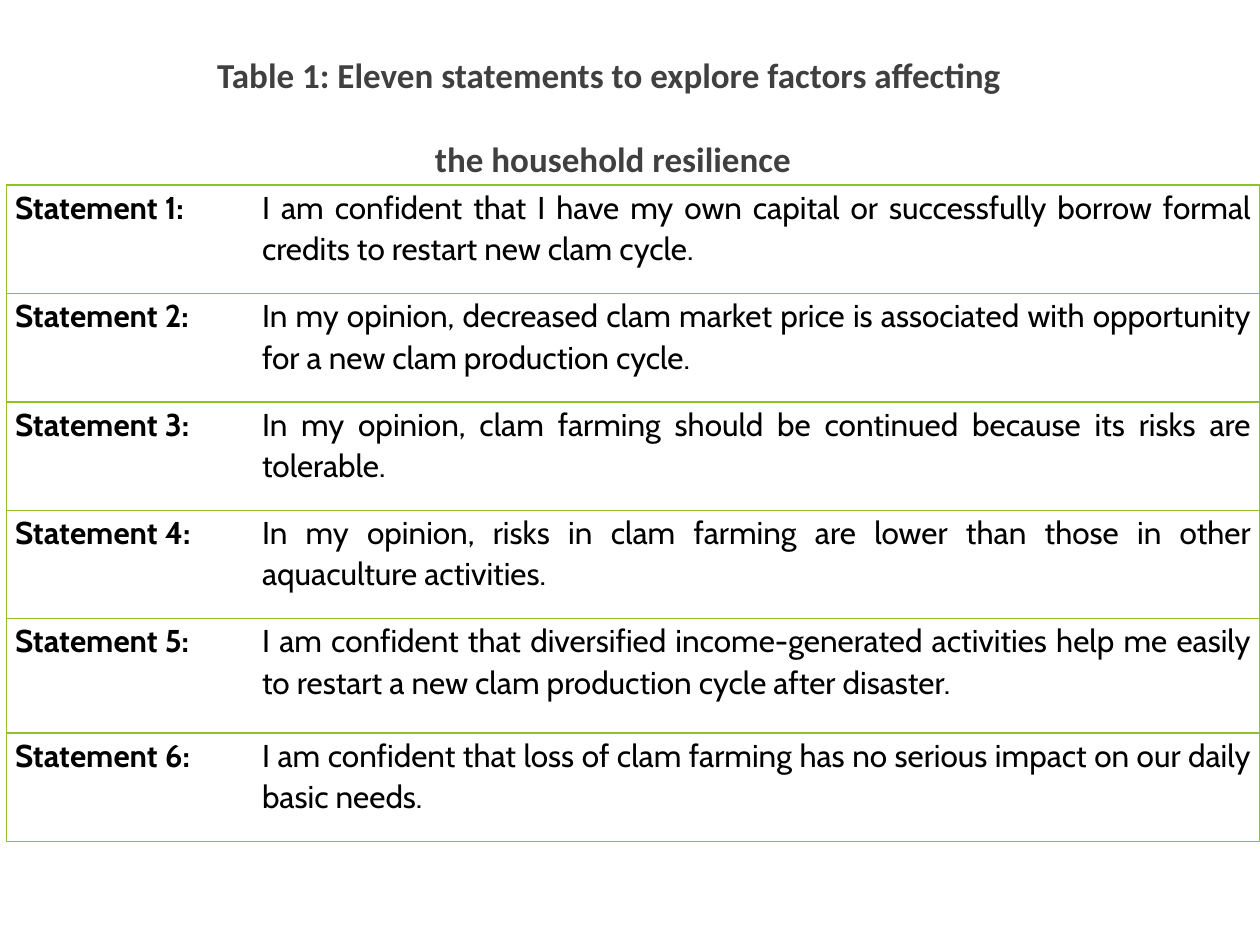
import pptx
import pptx.util
import pptx.dml.color
import pptx.enum.text
import pptx.oxml.ns
import lxml.etree

Inches, Pt = pptx.util.Inches, pptx.util.Pt
ALIGN = pptx.enum.text.PP_ALIGN
COLORS = {"title": "404040", "text": "000000", "line": "90C226"}

TITLE = [
    "Table 1: Eleven statements to explore factors affecting ",
    "the household resilience",
]
STATEMENTS = [
    "I am confident that I have my own capital or successfully borrow formal credits to restart new clam cycle.",
    "In my opinion, decreased clam market price is associated with opportunity for a new clam production cycle.",
    "In my opinion, clam farming should be continued because its risks are tolerable.",
    "In my opinion, risks in clam farming are lower than those in other aquaculture activities.",
    "I am confident that diversified income-generated activities help me easily to restart a new clam production cycle after disaster.",
    "I am confident that loss of clam farming has no serious impact on our daily basic needs.",
]
WIDTHS = [1.96, 7.99]
HEIGHTS = [0.86, 0.86, 0.86, 0.86, 0.91, 0.86]


def write(frame, lines, font, size, color, bold, align, spacing, before, after):
    frame.word_wrap = True
    for i, line in enumerate(lines):
        para = frame.add_paragraph() if i else frame.paragraphs[0]
        para.alignment = align
        para.line_spacing = spacing
        para.space_before, para.space_after = Pt(before), Pt(after)
        run = para.add_run()
        run.text = line
        run.font.name, run.font.size, run.font.bold = font, Pt(size), bold
        run.font.color.rgb = pptx.dml.color.RGBColor.from_string(color)


def border(cell, shown):
    """Draw the sides named in shown, and clear the other sides."""
    props = cell._tc.get_or_add_tcPr()
    qn = pptx.oxml.ns.qn
    for side in "LRTB":
        line = lxml.etree.SubElement(props, qn("a:ln" + side), w=str(Pt(1)))
        if side in shown:
            fill = lxml.etree.SubElement(line, qn("a:solidFill"))
            lxml.etree.SubElement(fill, qn("a:srgbClr"), val=COLORS["line"])
        else:
            lxml.etree.SubElement(line, qn("a:noFill"))


def main():
    deck = pptx.Presentation()
    deck.slide_width, deck.slide_height = Inches(10), Inches(7.5)
    slide = deck.slides.add_slide(deck.slide_layouts[6])

    title = slide.shapes.add_textbox(Inches(0.51), Inches(0.21), Inches(8.71), Inches(0.71))
    write(title.text_frame, TITLE, font="Calibri", size=20, color=COLORS["title"],
          bold=True, align=ALIGN.CENTER, spacing=1.5, before=6, after=6)

    table = slide.shapes.add_table(
        len(STATEMENTS), len(WIDTHS), Inches(0.05), Inches(1.47),
        Inches(sum(WIDTHS)), Inches(sum(HEIGHTS))).table
    table.first_row = table.horz_banding = False
    for col, width in zip(table.columns, WIDTHS):
        col.width = Inches(width)
    for row, height in zip(table.rows, HEIGHTS):
        row.height = Inches(height)

    for r, statement in enumerate(STATEMENTS):
        for c, text in enumerate([f"Statement {r + 1}: ", statement]):
            cell = table.cell(r, c)
            cell.margin_left = cell.margin_right = Inches(0.07)
            cell.margin_top, cell.margin_bottom = Inches(0.01), 0
            write(cell.text_frame, [text], font="Cabin", size=18, color=COLORS["text"],
                  bold=c == 0, align=ALIGN.JUSTIFY, spacing=1.07, before=0, after=8)
            border(cell, "LTB" if c == 0 else "RTB")
            cell.fill.background()

    deck.save("out.pptx")


if __name__ == "__main__":
    main()
